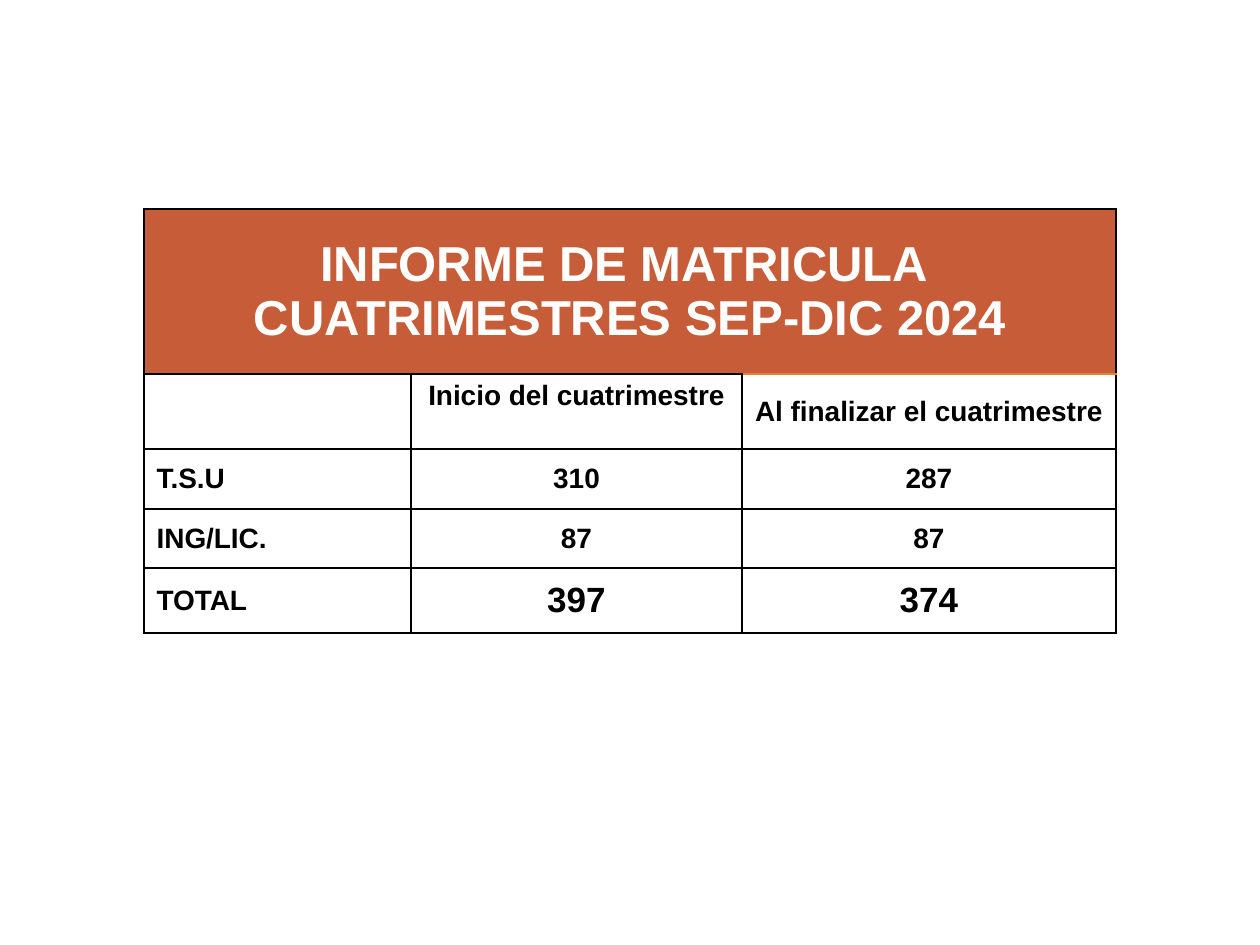
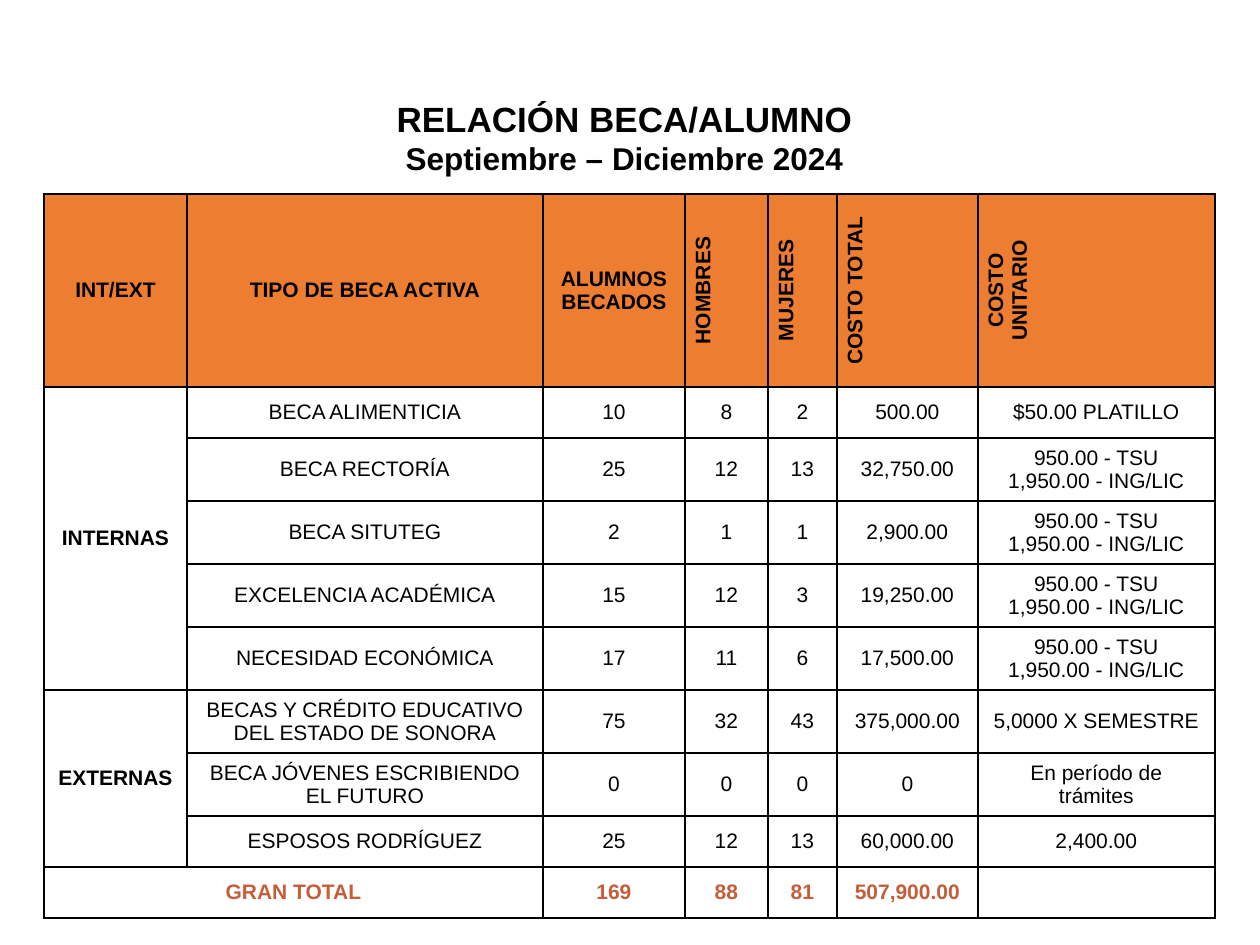
"""Build two slides: enrolment report and scholarships per student."""
from dataclasses import dataclass

from lxml.etree import SubElement
from pptx import Presentation
from pptx.dml.color import RGBColor
from pptx.enum.text import MSO_ANCHOR, PP_ALIGN
from pptx.oxml.ns import qn
from pptx.util import Emu, Pt


@dataclass(frozen=True)
class Theme:
    font: str = "Arial"
    black: str = "000000"
    white: str = "FFFFFF"
    rust: str = "C65D38"
    orange: str = "ED7D31"
    banner: int = 28
    heading: int = 20
    subheading: int = 18
    label: int = 16
    small: int = 12


THEME = Theme()
PX = 914400 / 126


def write_cell(cell, text, size, bold=True, color=THEME.black, fill=None,
               align=PP_ALIGN.CENTER, top_line=THEME.black):
    """Fill a cell with text, colour and four thin borders."""
    cell.text = text
    cell.vertical_anchor = MSO_ANCHOR.MIDDLE
    for paragraph in cell.text_frame.paragraphs:
        paragraph.alignment = align
        paragraph.font.name = THEME.font
        paragraph.font.size = Pt(size)
        paragraph.font.bold = bold
        paragraph.font.color.rgb = RGBColor.from_string(color)
    properties = cell._tc.get_or_add_tcPr()
    for side in ("lnL", "lnR", "lnT", "lnB"):
        line = SubElement(properties, qn(f"a:{side}"), w=str(Pt(1)))
        paint = SubElement(line, qn("a:solidFill"))
        SubElement(paint, qn("a:srgbClr"), val=top_line if side == "lnT" else THEME.black)
    if fill:
        cell.fill.solid()
        cell.fill.fore_color.rgb = RGBColor.from_string(fill)
    else:
        cell.fill.background()


def add_grid(slide, left, top, widths, heights):
    """Add a plain table with the given column widths and row heights in px."""
    box = [Emu(round(v * PX)) for v in (left, top, sum(widths), sum(heights))]
    grid = slide.shapes.add_table(len(heights), len(widths), *box).table
    grid.first_row = False
    grid.horz_banding = False
    for column, width in zip(grid.columns, widths):
        column.width = Emu(round(width * PX))
    for row, height in zip(grid.rows, heights):
        row.height = Emu(round(height * PX))
    return grid


prs = Presentation()
prs.slide_width = Emu(round(1260 * PX))
prs.slide_height = Emu(round(945 * PX))
blank = prs.slide_layouts[6]

enrolment_rows = [
    ("INFORME DE MATRICULA \nCUATRIMESTRES SEP-DIC 2024", "", ""),
    ("", "Inicio del cuatrimestre", "Al finalizar el cuatrimestre"),
    ("T.S.U", "310", "287"),
    ("ING/LIC.", "87", "87"),
    ("TOTAL", "397", "374"),
]
enrolment = add_grid(prs.slides.add_slide(blank), 144, 209, [267, 331, 374], [165, 75, 60, 59, 65])
for r, texts in enumerate(enrolment_rows):
    for c, text in enumerate(texts):
        cell = enrolment.cell(r, c)
        if r == 0:
            write_cell(cell, text, THEME.banner, color=THEME.white, fill=THEME.rust)
        else:
            write_cell(
                cell, text, THEME.heading if r == 4 and c else THEME.label, fill=THEME.white,
                align=PP_ALIGN.CENTER if c else PP_ALIGN.LEFT,
                top_line=THEME.orange if (r, c) == (1, 2) else THEME.black)
enrolment.cell(1, 1).vertical_anchor = MSO_ANCHOR.TOP
enrolment.cell(0, 0).merge(enrolment.cell(0, 2))

scholarship_slide = prs.slides.add_slide(blank)
by_level = "950.00 - TSU\n1,950.00 - ING/LIC"
scholarship_rows = [
    ("INT/EXT", "TIPO DE BECA ACTIVA", "ALUMNOS BECADOS", "HOMBRES", "MUJERES",
     "COSTO TOTAL", "COSTO UNITARIO"),
    ("INTERNAS", "BECA ALIMENTICIA", "10", "8", "2", "500.00", "$50.00 PLATILLO"),
    ("", "BECA RECTORÍA", "25", "12", "13", "32,750.00", by_level),
    ("", "BECA SITUTEG", "2", "1", "1", "2,900.00", by_level),
    ("", "EXCELENCIA ACADÉMICA", "15", "12", "3", "19,250.00", by_level),
    ("", "NECESIDAD ECONÓMICA", "17", "11", "6", "17,500.00", by_level),
    ("EXTERNAS", "BECAS Y CRÉDITO EDUCATIVO DEL ESTADO DE SONORA", "75", "32", "43",
     "375,000.00", "5,0000 X SEMESTRE"),
    ("", "BECA JÓVENES ESCRIBIENDO EL FUTURO", "0", "0", "0", "0", "En período de trámites"),
    ("", "ESPOSOS RODRÍGUEZ", "25", "12", "13", "60,000.00", "2,400.00"),
    ("GRAN TOTAL", "", "169", "88", "81", "507,900.00", ""),
]
scholarships = add_grid(scholarship_slide, 44, 194, [143, 356, 142, 83, 69, 141, 237],
                        [193, 51] + [63] * 6 + [51] * 2)
total_row = len(scholarship_rows) - 1
for r, texts in enumerate(scholarship_rows):
    for c, text in enumerate(texts):
        cell = scholarships.cell(r, c)
        write_cell(cell, text, THEME.small, bold=r in (0, total_row) or c == 0,
                   color=THEME.rust if r == total_row else THEME.black,
                   fill=THEME.orange if r == 0 else None)
        if r == 0 and c > 2:
            cell._tc.get_or_add_tcPr().set("vert", "vert270")
for first, last in (((1, 0), (5, 0)), ((6, 0), (8, 0)), ((total_row, 0), (total_row, 1))):
    scholarships.cell(*first).merge(scholarships.cell(*last))

heading = scholarship_slide.shapes.add_textbox(
    *[Emu(round(v * PX)) for v in (248, 91, 753, 93)]).text_frame
heading.word_wrap = True
heading.text = "RELACIÓN BECA/ALUMNO\nSeptiembre – Diciembre 2024"
for paragraph, size in zip(heading.paragraphs, (THEME.heading, THEME.subheading)):
    paragraph.alignment = PP_ALIGN.CENTER
    paragraph.font.name = THEME.font
    paragraph.font.size = Pt(size)
    paragraph.font.bold = True
    paragraph.font.color.rgb = RGBColor.from_string(THEME.black)

prs.save("out.pptx")
